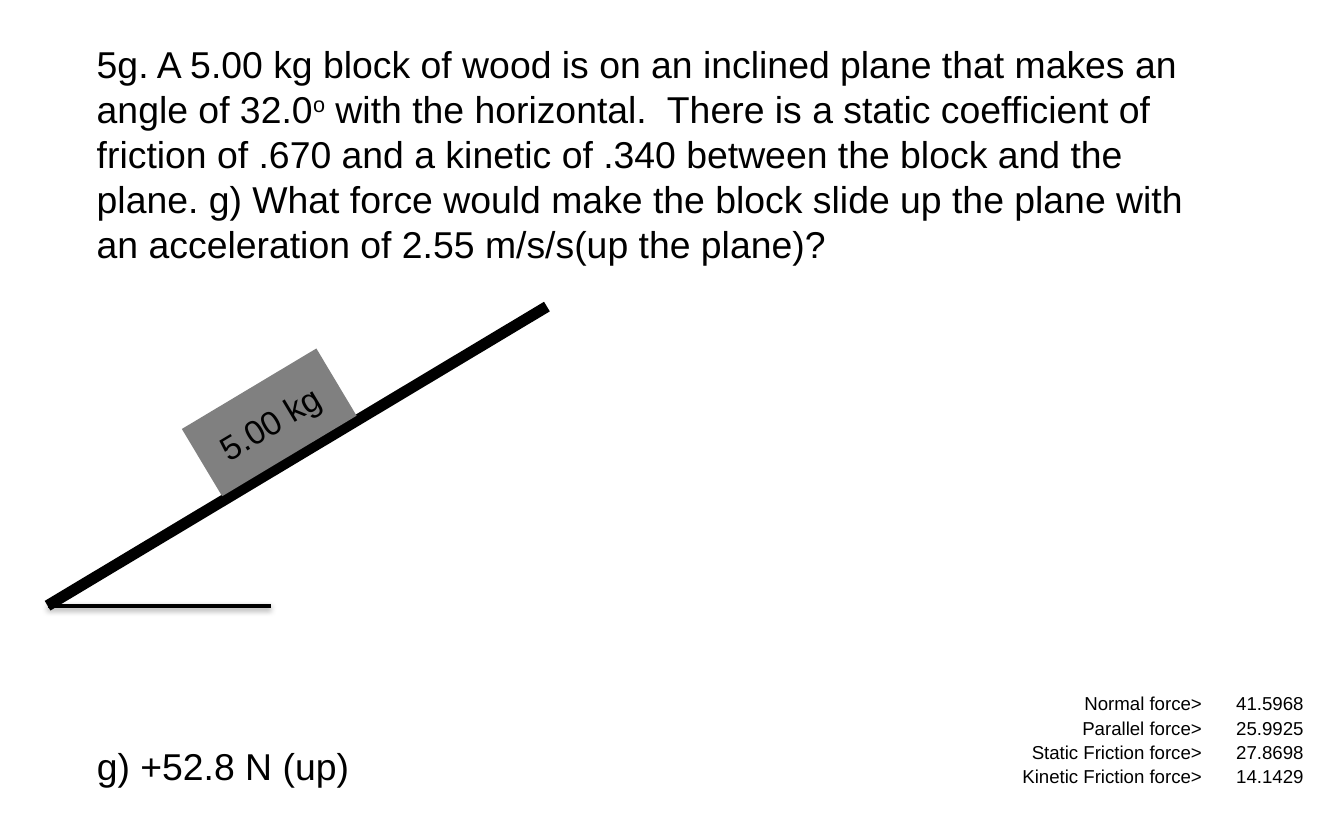
from lxml.etree import SubElement
from pptx import Presentation
from pptx.dml.color import RGBColor
from pptx.enum.shapes import MSO_CONNECTOR, MSO_SHAPE
from pptx.enum.text import MSO_ANCHOR, MSO_AUTO_SIZE, PP_ALIGN
from pptx.oxml.ns import qn
from pptx.util import Pt

COLORS = {"ink": "000000", "block": "808080"}
FONT = "Arial"
QUESTION = [
    ("5g. A 5.00 kg block of wood is on an inclined plane that makes an angle of 32.0", False),
    ("o", True),
    (" with the horizontal.  There is a static coefficient of friction of .670 and a kinetic "
     "of .340 between the block and the plane. g) What force would make the block slide up "
     "the plane with an acceleration of 2.55 m/s/s(up the plane)?", False),
]
FORCES = [
    ("Normal force>", "41.5968"),
    ("Parallel force>", "25.9925"),
    ("Static Friction force>", "27.8698"),
    ("Kinetic Friction force>", "14.1429"),
]


def color(name):
    return RGBColor.from_string(COLORS[name])


def write_text(frame, content, size=20, align=PP_ALIGN.LEFT):
    paragraph = frame.paragraphs[0]
    paragraph.alignment = align
    runs = [(content, False)] if isinstance(content, str) else content
    for text, superscript in runs:
        run = paragraph.add_run()
        run.text = text
        run.font.name = FONT
        run.font.size = Pt(size)
        run.font.color.rgb = color("ink")
        if superscript:
            run._r.get_or_add_rPr().set("baseline", "30000")


def add_text(slide, content, left, top, width, height, wrap=True):
    box = slide.shapes.add_textbox(Pt(left), Pt(top), Pt(width), Pt(height))
    box.text_frame.word_wrap = wrap
    box.text_frame.auto_size = MSO_AUTO_SIZE.SHAPE_TO_FIT_TEXT
    write_text(box.text_frame, content)


def add_line(shapes, start, end, width, shadow=False):
    line = shapes.add_connector(MSO_CONNECTOR.STRAIGHT, *map(Pt, start + end))
    line.line.color.rgb = color("ink")
    line.line.width = Pt(width)
    effects = SubElement(line._element.spPr, qn("a:effectLst"))
    if shadow:
        outer = SubElement(effects, qn("a:outerShdw"), blurRad=str(Pt(3.1)),
                           dist=str(Pt(1.6)), dir="5400000", rotWithShape="0")
        tint = SubElement(outer, qn("a:srgbClr"), val=COLORS["ink"])
        SubElement(tint, qn("a:alpha"), val="38000")


def add_block(shapes, text, left, top, width, height, rotation):
    block = shapes.add_shape(MSO_SHAPE.RECTANGLE, Pt(left), Pt(top), Pt(width), Pt(height))
    block.rotation = rotation
    block.shadow.inherit = False
    block.fill.solid()
    block.fill.fore_color.rgb = color("block")
    block.line.fill.background()
    block.text_frame.word_wrap = False
    block.text_frame.vertical_anchor = MSO_ANCHOR.MIDDLE
    write_text(block.text_frame, text, size=18, align=PP_ALIGN.CENTER)


def add_force_table(slide, rows, left, top, widths, row_height):
    frame = slide.shapes.add_table(len(rows), len(widths), Pt(left), Pt(top),
                                   Pt(sum(widths)), Pt(row_height * len(rows)))
    table = frame.table
    table.first_row = False
    table.horz_banding = False
    for column, width in zip(table.columns, widths):
        column.width = Pt(width)
    for row, values in zip(table.rows, rows):
        row.height = Pt(row_height)
        for cell, value in zip(row.cells, values):
            cell.fill.background()
            cell.vertical_anchor = MSO_ANCHOR.BOTTOM
            cell.margin_left = cell.margin_right = cell.margin_top = Pt(0.75)
            cell.margin_bottom = Pt(0)
            write_text(cell.text_frame, value, size=10, align=PP_ALIGN.RIGHT)


def main():
    presentation = Presentation()
    presentation.slide_width = Pt(720)
    presentation.slide_height = Pt(450)
    slide = presentation.slides.add_slide(presentation.slide_layouts[6])

    add_text(slide, QUESTION, 44.75, 18.75, 623, 128)
    add_text(slide, "g) +52.8 N (up)", 44.75, 394.5, 151, 31.5, wrap=False)
    add_force_table(slide, FORCES, 473, 370, (171.5, 54.5), 13)

    corner = (25.5, 324.5)
    incline = slide.shapes.add_group_shape()
    add_line(incline.shapes, corner, (293, 164.25), 6)
    add_block(incline.shapes, "5.00 kg", 102.25, 205.25, 84, 42, 329.1)
    add_line(slide.shapes, corner, (145.25, 324.5), 2, shadow=True)

    presentation.save("out.pptx")


if __name__ == "__main__":
    main()
